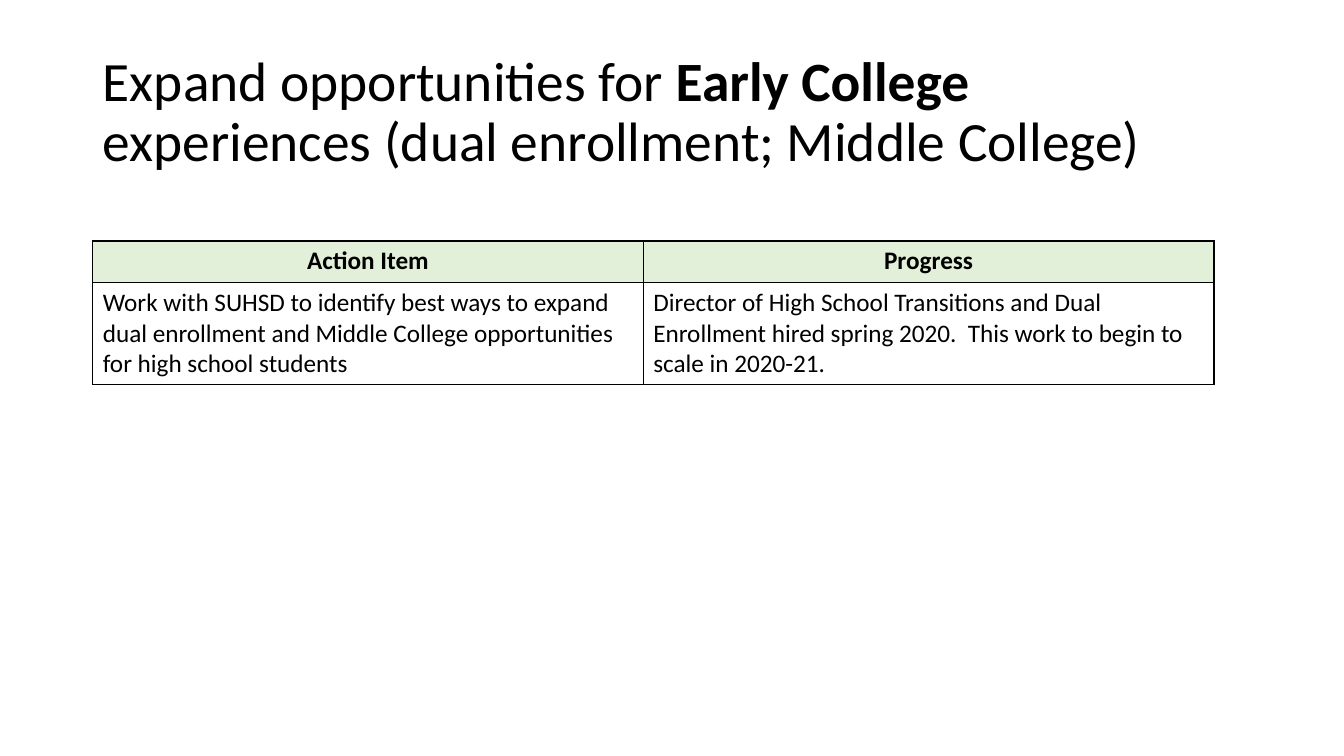
"""Build the Early College action item slide."""
from dataclasses import dataclass
from typing import Any

from lxml import etree
from pptx import Presentation
from pptx import util as u
from pptx.dml import color
from pptx.enum import text
from pptx.oxml import ns


@dataclass(frozen=True)
class Theme:
    font: str = "Calibri"
    ink: str = "000000"
    header_fill: str = "E2F0D9"
    title_size: float = 39.6
    table_size: float = 18
    border_width: float = 1


@dataclass(frozen=True)
class Phrase:
    wording: str
    bold: bool = False


@dataclass(frozen=True)
class Column:
    width: float
    heading: str
    entry: str


THEME = Theme()
TITLE = (
    Phrase("Expand opportunities for "),
    Phrase("Early College ", bold=True),
    Phrase("experiences (dual enrollment; Middle College)"),
)
COLUMNS = (
    Column(5.46, "Action Item",
           "Work with SUHSD to identify best ways to expand dual enrollment "
           "and Middle College opportunities for high school students"),
    Column(5.66, "Progress",
           "Director of High School Transitions and Dual Enrollment hired "
           "spring 2020.  This work to begin to scale in 2020-21."),
)
ROW_HEIGHTS = (0.41, 1.01)


def apply_format(target: Any, values: dict[str, Any]) -> None:
    for name, value in values.items():
        setattr(target, name, value)


def add_phrase(paragraph: Any, phrase: Phrase, size: float) -> None:
    run = paragraph.add_run()
    run.text = phrase.wording
    apply_format(run.font, {"name": THEME.font, "size": u.Pt(size), "bold": phrase.bold})
    run.font.color.rgb = color.RGBColor.from_string(THEME.ink)


def add_borders(cell: Any) -> None:
    properties = cell._tc.get_or_add_tcPr()
    for position, side in enumerate(("a:lnL", "a:lnR", "a:lnT", "a:lnB")):
        line = etree.Element(ns.qn(side), w=str(u.Pt(THEME.border_width)))
        fill = etree.SubElement(line, ns.qn("a:solidFill"))
        etree.SubElement(fill, ns.qn("a:srgbClr"), val=THEME.ink)
        properties.insert(position, line)


def fill_cell(cell: Any, wording: str, header: bool) -> None:
    paragraph = cell.text_frame.paragraphs[0]
    paragraph.alignment = text.PP_ALIGN.CENTER if header else text.PP_ALIGN.LEFT
    add_phrase(paragraph, Phrase(wording, bold=header), THEME.table_size)
    if header:
        cell.fill.solid()
        cell.fill.fore_color.rgb = color.RGBColor.from_string(THEME.header_fill)
    else:
        cell.fill.background()
    add_borders(cell)


def add_title(slide: Any) -> None:
    title = slide.shapes.title
    apply_format(title, {"left": u.Inches(0.92), "top": u.Inches(0.4),
                         "width": u.Inches(11.5), "height": u.Inches(1.45)})
    apply_format(title.text_frame, {"word_wrap": True,
                                    "auto_size": text.MSO_AUTO_SIZE.NONE,
                                    "vertical_anchor": text.MSO_ANCHOR.MIDDLE})
    paragraph = title.text_frame.paragraphs[0]
    apply_format(paragraph, {"alignment": text.PP_ALIGN.LEFT, "line_spacing": 0.9})
    for phrase in TITLE:
        add_phrase(paragraph, phrase, THEME.title_size)


def add_action_table(slide: Any) -> None:
    width = sum(column.width for column in COLUMNS)
    table = slide.shapes.add_table(
        len(ROW_HEIGHTS), len(COLUMNS), u.Inches(0.92), u.Inches(2.39),
        u.Inches(width), u.Inches(sum(ROW_HEIGHTS))).table
    apply_format(table, {"first_row": True, "horz_banding": False})
    for row, height in zip(table.rows, ROW_HEIGHTS):
        row.height = u.Inches(height)
    for index, column in enumerate(COLUMNS):
        table.columns[index].width = u.Inches(column.width)
        fill_cell(table.cell(0, index), column.heading, header=True)
        fill_cell(table.cell(1, index), column.entry, header=False)


def main() -> None:
    presentation = Presentation()
    apply_format(presentation, {"slide_width": u.Inches(13.33),
                                "slide_height": u.Inches(7.5)})
    slide = presentation.slides.add_slide(presentation.slide_layouts[5])
    add_title(slide)
    add_action_table(slide)
    presentation.save("out.pptx")


if __name__ == "__main__":
    main()
